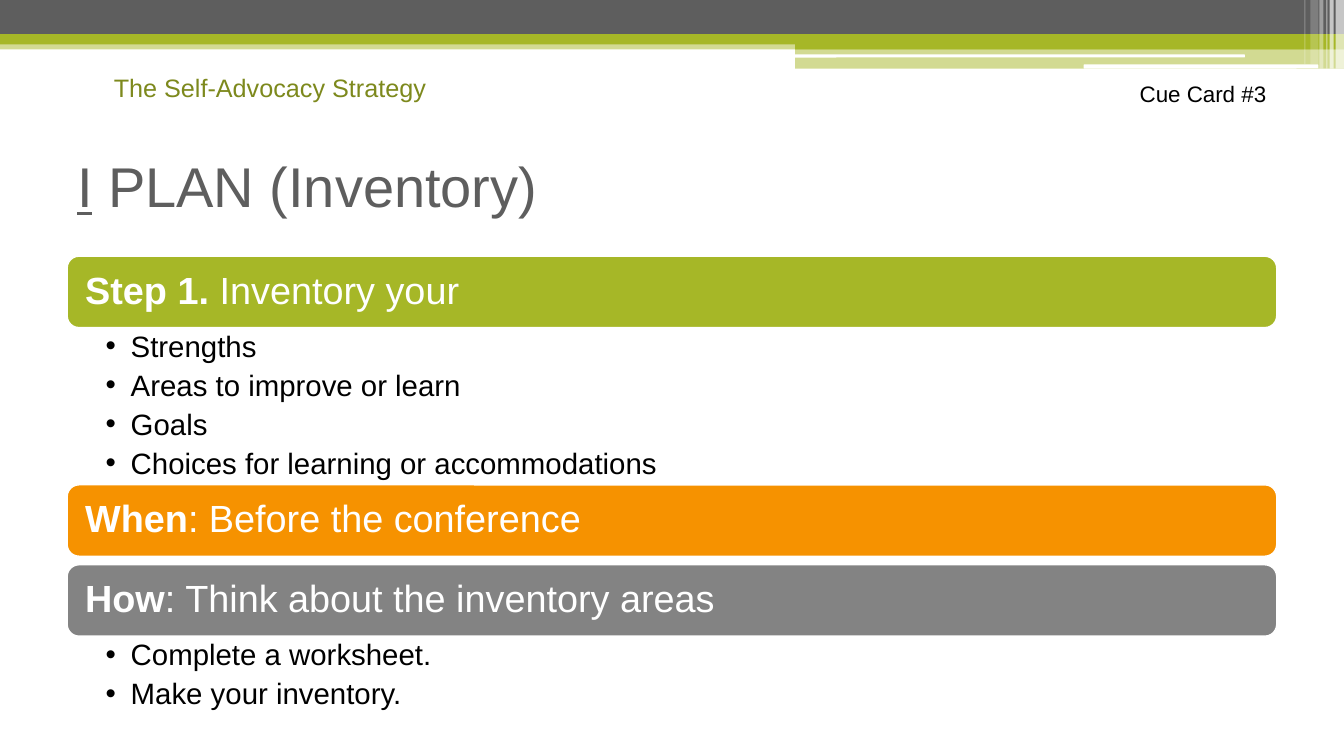
import lxml.etree
import pptx
import pptx.dml.color
import pptx.enum.shapes
import pptx.enum.text
import pptx.oxml.ns
import pptx.util

Pt = pptx.util.Pt
Shape = pptx.enum.shapes.MSO_SHAPE
Align = pptx.enum.text.PP_ALIGN
Anchor = pptx.enum.text.MSO_ANCHOR
qn = pptx.oxml.ns.qn

COLORS = {
    "green": "A6B727", "olive": "7D891D", "orange": "F69200", "gray": "838383",
    "dark": "5E5E5E", "white": "FFFFFF", "black": "000000",
}

presentation = pptx.Presentation()
presentation.slide_width = Pt(960)
presentation.slide_height = Pt(540)
slide = presentation.slides.add_slide(presentation.slide_layouts[6])


def add_block(kind, left, top, width, height, color, opacity=100):
    shape = slide.shapes.add_shape(kind, Pt(left), Pt(top), Pt(width), Pt(height))
    shape.shadow.inherit = False
    shape.line.fill.background()
    shape.fill.solid()
    shape.fill.fore_color.rgb = pptx.dml.color.RGBColor.from_string(COLORS[color])
    if opacity < 100:
        color_element = shape.fill._xPr.find(".//" + qn("a:srgbClr"))
        lxml.etree.SubElement(color_element, qn("a:alpha"), val=str(opacity * 1000))
    return shape


def write_text(shape, paragraphs, size, color, margins=(7.2, 3.6, 7.2, 3.6), align=Align.LEFT,
               anchor=Anchor.TOP, wrap=True, bullet=False, line_spacing=1.0, space_after=0):
    frame = shape.text_frame
    frame.word_wrap = wrap
    frame.vertical_anchor = anchor
    frame.margin_left, frame.margin_top, frame.margin_right, frame.margin_bottom = map(Pt, margins)
    for index, runs in enumerate(paragraphs):
        paragraph = frame.add_paragraph() if index else frame.paragraphs[0]
        paragraph.alignment = align
        paragraph.line_spacing = line_spacing
        paragraph.space_after = Pt(space_after)
        if bullet:
            properties = paragraph._p.get_or_add_pPr()
            properties.set("marL", str(Pt(18)))
            properties.set("indent", str(-Pt(18)))
            lxml.etree.SubElement(properties, qn("a:buFont"), typeface="Arial")
            lxml.etree.SubElement(properties, qn("a:buChar"), char="•")
        for text, style in runs:
            run = paragraph.add_run()
            run.text = text
            run.font.name = "Arial"
            run.font.size = Pt(size)
            run.font.bold = style == "bold"
            run.font.underline = style == "underline"
            run.font.color.rgb = pptx.dml.color.RGBColor.from_string(COLORS[color])


for left, top, width, height, color, opacity in [
    (0, 28.8, 960, 6.5, "green", 50),
    (0, 0, 960, 24.5, "dark", 100),
    (0, 24.5, 960, 7.2, "green", 100),
    (568, 28.1, 392, 7.2, "green", 100),
    (568, 34.6, 392, 14.4, "green", 50),
]:
    add_block(Shape.RECTANGLE, left, top, width, height, color, opacity)

for left, top, width, height in [(567.4, 38.9, 321.8, 2.2), (774, 46.1, 167.8, 2.9)]:
    add_block(Shape.ROUNDED_RECTANGLE, left, top, width, height, "white")

for left, width, height, opacity in [
    (954, 6, 49, 65), (949.7, 2.9, 49, 65), (947.5, 0.7, 49, 60),
    (942.5, 2.9, 49, 40), (936, 5.8, 46, 20), (931.7, 0.7, 46, 30),
]:
    add_block(Shape.RECTANGLE, left, 0, width, height, "white", opacity)

strategy = slide.shapes.add_textbox(Pt(74.2), Pt(48.2), Pt(239.8), Pt(28.8))
write_text(strategy, [[("The Self-Advocacy Strategy", "")]], size=18, color="olive", wrap=False)

title = slide.shapes.add_textbox(Pt(48), Pt(90), Pt(864), Pt(84.2))
write_text(title, [[("I", "underline"), (" PLAN (Inventory)", "")]],
           size=40, color="dark", anchor=Anchor.MIDDLE)

cue_card = slide.shapes.add_textbox(Pt(772.6), Pt(54), Pt(139), Pt(36))
write_text(cue_card, [[("Cue Card #3", "")]], size=16, color="black", align=Align.RIGHT)

bar_height = 51
for top, color, lead, rest, items, list_height in [
    (183, "green", "Step 1. ", "Inventory your",
     ["Strengths", "Areas to improve or learn", "Goals",
      "Choices for learning or accommodations"], 112.3),
    (346.3, "orange", "When", ": Before the conference", [], 0),
    (403.4, "gray", "How", ": Think about the inventory areas",
     ["Complete a worksheet.", "Make your inventory."], 56.9),
]:
    bar = add_block(Shape.ROUNDED_RECTANGLE, 48, top, 864, bar_height, color)
    bar.line.color.rgb = pptx.dml.color.RGBColor.from_string(COLORS["white"])
    bar.line.width = Pt(1)
    write_text(bar, [[(lead, "bold"), (rest, "")]], size=27, color="white",
               margins=(10.4, 7.9, 10.4, 7.9), anchor=Anchor.MIDDLE, line_spacing=0.9)
    if items:
        details = slide.shapes.add_textbox(Pt(48), Pt(top + bar_height), Pt(864), Pt(list_height))
        write_text(details, [[(item, "")] for item in items], size=21, color="black",
                   margins=(27.4, 2.9, 15.1, 2.9), bullet=True, line_spacing=0.9, space_after=5.2)

presentation.save("out.pptx")
